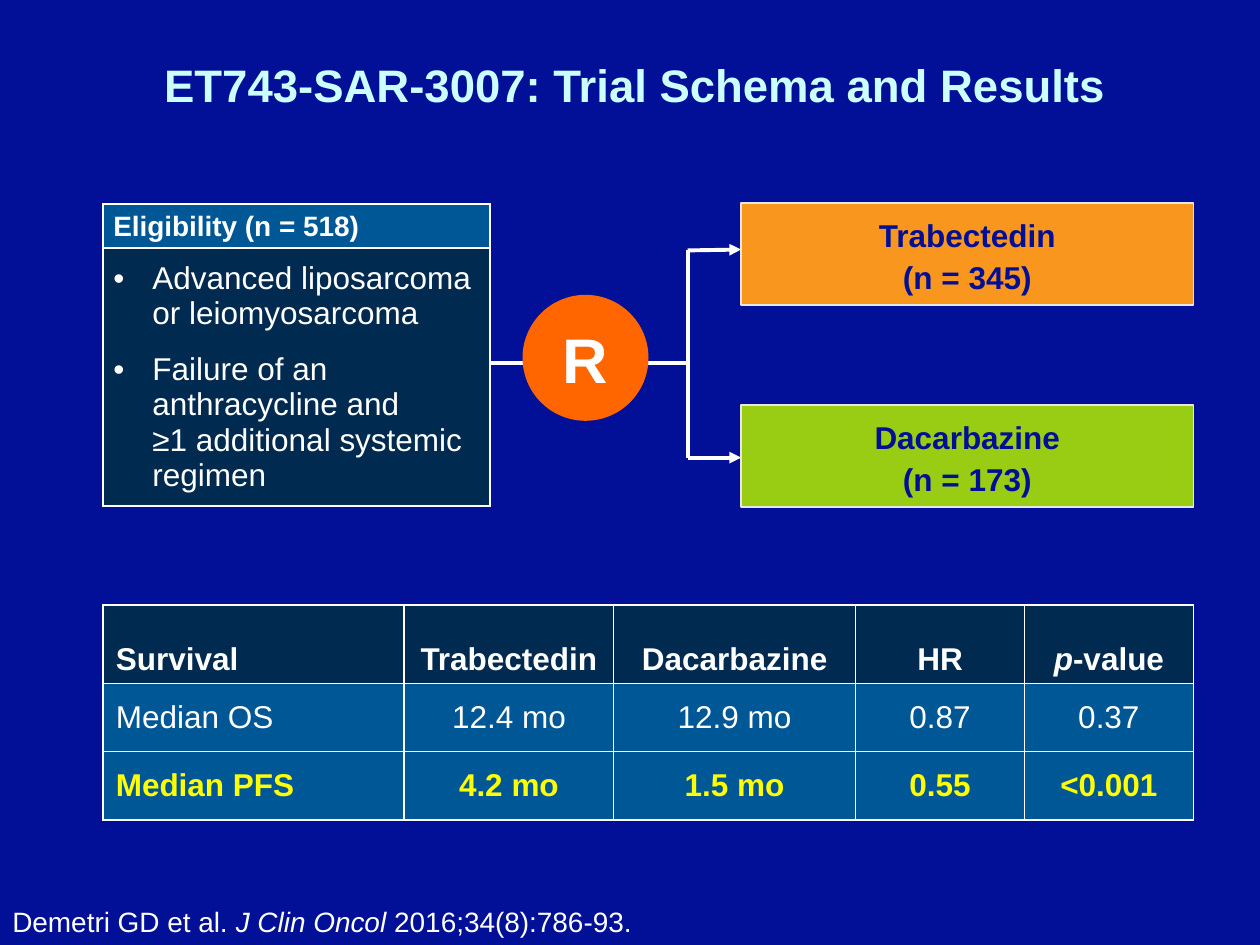
import pptx
import pptx.dml.color
import pptx.enum.shapes
import pptx.enum.text
import pptx.oxml
import pptx.oxml.ns
import pptx.util
import lxml.etree

Pt = pptx.util.Pt
ALIGN = pptx.enum.text.PP_ALIGN
ANCHOR = pptx.enum.text.MSO_ANCHOR
SHAPE = pptx.enum.shapes.MSO_SHAPE

WHITE, YELLOW, NAVY, BLUE = "FFFFFF", "FFFF00", "012A50", "005796"
LEFT, RIGHT = 59, 682
ARM_LEFT, ARM_WIDTH, ARM_HEIGHT = 423.5, 258.5, 58.3
FORK_X, FORK_Y = 393, 207.4


def color(hex_string):
    return pptx.dml.color.RGBColor.from_string(hex_string)


def add_xml(parent, tag, **attributes):
    return lxml.etree.SubElement(parent, pptx.oxml.ns.qn(tag), attributes)


def write(frame, text, size=18, ink=WHITE, bold=False, align=ALIGN.LEFT,
          line_spacing=None, gap=None, bullet=None, indent=22.3):
    """Newline starts a paragraph, \\v breaks a line, asterisks enclose italics."""
    for index, line in enumerate(text.split("\n")):
        para = frame.paragraphs[0] if index == 0 else frame.add_paragraph()
        para.alignment = align
        if line_spacing:
            para.line_spacing = line_spacing
        if gap is not None:
            para.space_before = para.space_after = Pt(gap)
        if bullet:
            properties = para._p.get_or_add_pPr()
            properties.set("marL", str(Pt(indent)))
            properties.set("indent", str(-Pt(indent)))
            add_xml(properties, "a:buFont", typeface="Arial")
            add_xml(properties, "a:buChar", char=bullet)
        for part_number, part in enumerate(line.split("*")):
            for piece_number, piece in enumerate(part.split("\v")):
                if piece_number:
                    para.add_line_break()
                if not piece:
                    continue
                span = para.add_run()
                span.text = piece
                font = span.font
                font.name, font.size, font.bold = "Arial", Pt(size), bold
                font.italic = part_number % 2 == 1
                font.color.rgb = color(ink)


def add_text(page, left, top, width, height, text, anchor=ANCHOR.TOP, **style):
    box = page.shapes.add_textbox(Pt(left), Pt(top), Pt(width), Pt(height))
    box.text_frame.word_wrap = True
    box.text_frame.vertical_anchor = anchor
    write(box.text_frame, text, **style)


def add_block(page, kind, left, top, width, height, fill, text,
              outline=None, wrap=True, **style):
    block = page.shapes.add_shape(kind, Pt(left), Pt(top), Pt(width), Pt(height))
    block.shadow.inherit = False
    block.fill.solid()
    block.fill.fore_color.rgb = color(fill)
    if outline:
        block.line.color.rgb = color(outline)
        block.line.width = Pt(1)
    else:
        block.line.fill.background()
    block.text_frame.word_wrap = wrap
    block.text_frame.vertical_anchor = ANCHOR.MIDDLE
    write(block.text_frame, text, bold=True, align=ALIGN.CENTER, **style)


def add_line(page, x1, y1, x2, y2, arrow=False):
    line = page.shapes.add_connector(
        pptx.enum.shapes.MSO_CONNECTOR.STRAIGHT, Pt(x1), Pt(y1), Pt(x2), Pt(y2))
    line.line.color.rgb = color(WHITE)
    line.line.width = Pt(2.25)
    if arrow:
        add_xml(line.line._get_or_add_ln(), "a:tailEnd", type="triangle")
    add_xml(line._element.spPr, "a:effectLst")


def add_grid(page, left, top, widths, heights):
    frame = page.shapes.add_table(len(heights), len(widths), Pt(left), Pt(top),
                                  Pt(sum(widths)), Pt(sum(heights)))
    for column, width in zip(frame.table.columns, widths):
        column.width = Pt(width)
    for row, height in zip(frame.table.rows, heights):
        row.height = Pt(height)
    return frame.table


def fill_cell(cell, text, fill, anchor=ANCHOR.MIDDLE, insets=None, **style):
    """Insets are the horizontal and the vertical margin."""
    properties = cell._tc.get_or_add_tcPr()
    for side in "LRTB":
        border = add_xml(properties, f"a:ln{side}", w=str(Pt(1)))
        add_xml(add_xml(border, "a:solidFill"), "a:srgbClr", val=WHITE)
    cell.fill.solid()
    cell.fill.fore_color.rgb = color(fill)
    cell.vertical_anchor = anchor
    if insets:
        cell.margin_left = cell.margin_right = Pt(insets[0])
        cell.margin_top = cell.margin_bottom = Pt(insets[1])
    write(cell.text_frame, text, **style)


def add_results(page):
    rows = [
        ("Survival", "Trabectedin", "Dacarbazine", "HR", "*p*-value"),
        ("Median OS", "12.4 mo", "12.9 mo", "0.87", "0.37"),
        ("Median PFS", "4.2 mo", "1.5 mo", "0.55", "<0.001"),
    ]
    styles = [
        dict(fill=NAVY, anchor=ANCHOR.BOTTOM, bold=True),
        dict(fill=BLUE),
        dict(fill=BLUE, ink=YELLOW, bold=True),
    ]
    grid = add_grid(page, LEFT, 345.6, [172, 119.7, 138.3, 96.5, 96.5], [45, 39, 39])
    for r, (values, style) in enumerate(zip(rows, styles)):
        for c, value in enumerate(values):
            fill_cell(grid.cell(r, c), value,
                      align=ALIGN.CENTER if c else ALIGN.LEFT, **style)


def add_eligibility(page):
    grid = add_grid(page, LEFT, 116.6, [221], [24.5, 147])
    insets = (5.8, 2.9)
    fill_cell(grid.cell(0, 0), "Eligibility (n = 518)", BLUE, anchor=ANCHOR.BOTTOM,
              insets=insets, size=16, bold=True)
    fill_cell(grid.cell(1, 0),
              "Advanced liposarcoma or leiomyosarcoma\n"
              "Failure of an anthracycline and \v≥1 additional systemic regimen",
              NAVY, insets=insets, gap=6, bullet="•")


def main():
    deck = pptx.Presentation()
    deck.slide_width, deck.slide_height = Pt(720), Pt(540)
    page = deck.slides.add_slide(deck.slide_layouts[6])
    page.background.fill.solid()
    page.background.fill.fore_color.rgb = color("011097")

    arms = [("Trabectedin\n(n = 345)", "F9961E", 116),
            ("Dacarbazine\n(n = 173)", "99CD13", 231.3)]
    for text, fill, top in arms:
        add_block(page, SHAPE.RECTANGLE, ARM_LEFT, top, ARM_WIDTH, ARM_HEIGHT, fill,
                  text, outline="E6E6E6", ink="010F97", line_spacing=1.1)

    add_text(page, 18, 0, 690, 100.8, "ET743-SAR-3007: Trial Schema and Results",
             anchor=ANCHOR.MIDDLE, size=26, ink="CCFFFF", bold=True,
             align=ALIGN.CENTER, line_spacing=0.9)
    add_results(page)
    add_text(page, 0, 513.4, 704, 26.6,
             "Demetri GD et al. *J Clin Oncol *2016;34(8):786-93.", size=16)

    upper, lower = 143.1, 261.5
    add_line(page, 273.6, FORK_Y, FORK_X, FORK_Y)
    add_line(page, FORK_X, upper, FORK_X, lower)
    add_line(page, FORK_X, upper, ARM_LEFT, upper - 0.5, arrow=True)
    add_line(page, FORK_X, lower, ARM_LEFT, lower, arrow=True)
    add_eligibility(page)
    add_block(page, SHAPE.OVAL, 298.6, 168.5, 72, 72, "FF6600", "R",
              wrap=False, size=36)

    deck.save("out.pptx")


if __name__ == "__main__":
    main()
